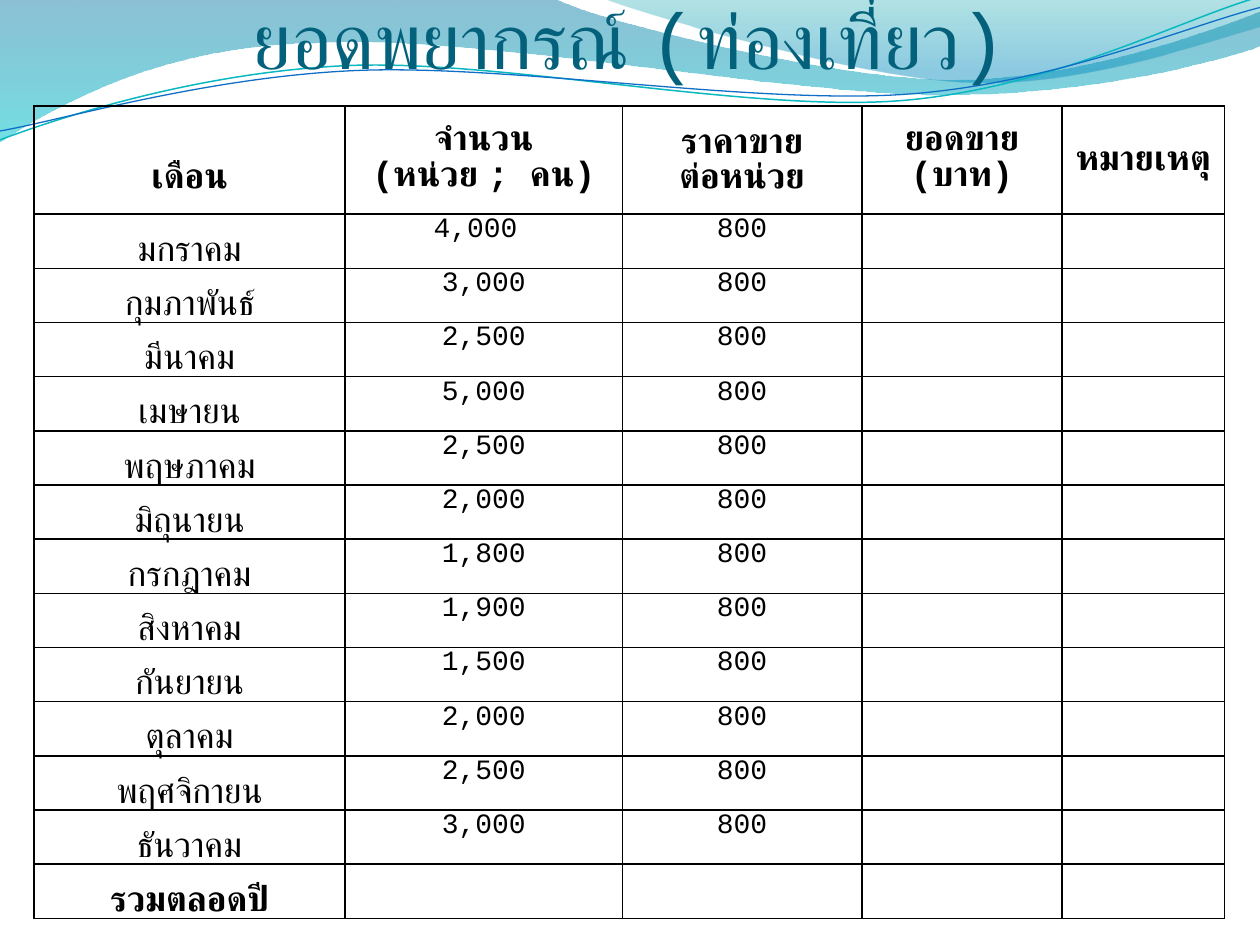
from math import cos, radians, sin

from lxml.etree import SubElement
from pptx import Presentation
from pptx.dml.color import RGBColor
from pptx.enum.text import MSO_ANCHOR, MSO_AUTO_SIZE, PP_ALIGN
from pptx.oxml.ns import qn
from pptx.util import Inches, Pt

FONT = "Courier New"
COLORS = {
    "title": "04617B", "text": "000000", "border": "000000",
    "teal_line": "0AB8BF", "blue_line": "0F6FC6",
    "deep_blue": "0074A1", "aqua": "00C6CF",
    "teal": "00A1A9", "blue": "008BBF",
}
LEFT_WAVE = [
    [(0, -0.01)], [(4.4, -0.01)],
    [(4.76, 0.17), (6.64, 0.63), (7.58, 0.63)],
    [(8.53, 0.63), (9.58, 0.26), (10, 0.09)],
    [(10.01, 0.36)],
    [(9.83, 0.44), (8.7, 0.76), (7.46, 0.75)],
    [(6.22, 0.75), (3.82, 0.28), (2.57, 0.34)],
    [(1.29, 0.35), (0.46, 0.83), (-0.01, 1.13)],
    [(0, -0.01)],
]
RIGHT_WAVE = [
    [(4.79, -0.01)],
    [(5.09, 0.11), (6.82, 0.62), (7.69, 0.65)],
    [(8.56, 0.69), (9.61, 0.32), (10, 0.21)],
    [(10, 0)], [(4.79, -0.01)],
]
TEAL_CURVE = [
    [(0, 1.11)],
    [(0.48, 0.93), (1.58, 0.57), (2.77, 0.52)],
    [(3.95, 0.47), (5.93, 0.89), (7.13, 0.8)],
    [(8.33, 0.71), (9.38, 0.15), (9.98, -0.02)],
]
BLUE_CURVE = [
    [(0, 1.04)],
    [(0.47, 0.96), (1.64, 0.61), (2.83, 0.56)],
    [(4.03, 0.51), (5.97, 0.83), (7.17, 0.75)],
    [(8.36, 0.67), (9.41, 0.21), (10, 0.06)],
]
CURVE_TILT = -2.7
HEADERS = [["เดือน"], ["จำนวน", "(หน่วย ; คน)"], ["ราคาขาย", "ต่อหน่วย"],
           ["ยอดขาย", "(บาท)"], ["หมายเหตุ"]]
UNITS = [
    ("มกราคม", "4,000 "), ("กุมภาพันธ์", "3,000"), ("มีนาคม", "2,500"),
    ("เมษายน", "5,000"), ("พฤษภาคม", "2,500"), ("มิถุนายน", "2,000"),
    ("กรกฎาคม", "1,800"), ("สิงหาคม", "1,900"), ("กันยายน", "1,500"),
    ("ตุลาคม", "2,000"), ("พฤศจิกายน", "2,500"), ("ธันวาคม", "3,000"),
]
PRICE = "800"
TOTAL = "รวมตลอดปี"
COL_WIDTHS = [2.47, 2.2, 1.9, 1.59, 1.29]
HEADER_HEIGHT, ROW_HEIGHT = 0.86, 0.43


def rgb(name):
    return RGBColor.from_string(COLORS[name])


def add_run(p, text, size, color="text", bold=False):
    r = p.add_run()
    r.text = text
    r.font.size = Pt(size)
    r.font.bold = bold
    r.font.name = FONT
    r.font.color.rgb = rgb(color)


def turn(segments, center, degrees):
    cx, cy = center
    c, s = cos(radians(degrees)), sin(radians(degrees))
    return [[(cx + (x - cx) * c - (y - cy) * s, cy + (x - cx) * s + (y - cy) * c)
             for x, y in seg] for seg in segments]


def add_outline(s, segments, close):
    start, *rest = [(Inches(x), Inches(y)) for seg in segments for x, y in seg]
    builder = s.shapes.build_freeform(*start)
    builder.add_line_segments(rest, close=close)
    sp = builder.convert_to_shape()
    sp.shadow.inherit = False
    lines = iter(list(sp.element.spPr.iter(qn("a:lnTo"))))
    for seg in segments[1:]:
        first, *others = [next(lines) for _ in seg]
        if others:
            first.tag = qn("a:cubicBezTo")
            for line in others:
                first.append(line[0])
                line.getparent().remove(line)
    return sp


def add_wave(s, segments, stops):
    sp = add_outline(s, segments, True)
    sp.line.fill.background()
    sp.fill.gradient()
    sp.fill.gradient_angle = 270
    for stop, (position, color, _) in zip(sp.fill.gradient_stops, stops):
        stop.position = position
        stop.color.rgb = rgb(color)
    for clr, (_, _, opacity) in zip(sp.element.spPr.iter(qn("a:srgbClr")), stops):
        SubElement(clr, qn("a:alpha"), val=str(opacity * 1000))


def add_curve(s, segments, center, color, width):
    sp = add_outline(s, turn(segments, center, -CURVE_TILT), False)
    sp.rotation = CURVE_TILT
    sp.fill.background()
    sp.line.color.rgb = rgb(color)
    sp.line.width = Pt(width)


def set_title(s, text):
    title = s.shapes.title
    s.shapes.element.append(title.element)
    title.left, title.top = Inches(0), Inches(0)
    title.width, title.height = Inches(10), Inches(0.68)
    tf = title.text_frame
    tf.auto_size = MSO_AUTO_SIZE.NONE
    tf.word_wrap = True
    tf.vertical_anchor = MSO_ANCHOR.BOTTOM
    tf.margin_left = tf.margin_right = tf.margin_bottom = Inches(0)
    tf.margin_top = Inches(0.05)
    p = tf.paragraphs[0]
    p.alignment = PP_ALIGN.CENTER
    add_run(p, text, 45, "title")


def format_cell(cell):
    cell.fill.background()
    cell.margin_left = cell.margin_right = Inches(0.07)
    cell.margin_top = cell.margin_bottom = Inches(0)
    tcPr = cell._tc.get_or_add_tcPr()
    for i, side in enumerate(("lnL", "lnR", "lnT", "lnB")):
        ln = tcPr.makeelement(qn(f"a:{side}"), {"w": str(Pt(1))})
        fill = SubElement(ln, qn("a:solidFill"))
        SubElement(fill, qn("a:srgbClr"), val=COLORS["border"])
        tcPr.insert(i, ln)


def fill_cell(cell, lines, size, anchor, bold=False):
    cell.vertical_anchor = anchor
    tf = cell.text_frame
    for i, line in enumerate(lines):
        p = tf.add_paragraph() if i else tf.paragraphs[0]
        p.alignment = PP_ALIGN.CENTER
        add_run(p, line, size, bold=bold)


def add_forecast_table(s):
    row_count = len(UNITS) + 2
    height = HEADER_HEIGHT + ROW_HEIGHT * (row_count - 1)
    table = s.shapes.add_table(row_count, len(COL_WIDTHS), Inches(0.27), Inches(0.84),
                               Inches(sum(COL_WIDTHS)), Inches(height)).table
    table.first_row = table.horz_banding = False
    for col, width in zip(table.columns, COL_WIDTHS):
        col.width = Inches(width)
    for i, row in enumerate(table.rows):
        row.height = Inches(ROW_HEIGHT if i else HEADER_HEIGHT)
    for cell in table.iter_cells():
        format_cell(cell)
    for i, lines in enumerate(HEADERS):
        fill_cell(table.cell(0, i), lines, 20, MSO_ANCHOR.MIDDLE, bold=True)
    table.cell(0, 0).margin_top = Inches(0.29)
    for i, (month, units) in enumerate(UNITS, 1):
        fill_cell(table.cell(i, 0), [month], 20, MSO_ANCHOR.BOTTOM)
        fill_cell(table.cell(i, 1), [units], 16, MSO_ANCHOR.TOP)
        fill_cell(table.cell(i, 2), [PRICE], 16, MSO_ANCHOR.TOP)
    fill_cell(table.cell(row_count - 1, 0), [TOTAL], 20, MSO_ANCHOR.BOTTOM, bold=True)


def main():
    prs = Presentation()
    prs.slide_width, prs.slide_height = Inches(10), Inches(7.5)
    s = prs.slides.add_slide(prs.slide_layouts[5])
    add_wave(s, LEFT_WAVE, [(0, "deep_blue", 45), (1, "aqua", 55)])
    add_wave(s, RIGHT_WAVE, [(0, "teal", 30), (0.8, "blue", 45)])
    add_curve(s, TEAL_CURVE, (4.99, 0.58), "teal_line", 0.85)
    add_curve(s, BLUE_CURVE, (5, 0.59), "blue_line", 0.75)
    set_title(s, "ยอดพยากรณ์ (ท่องเที่ยว)")
    add_forecast_table(s)
    prs.save("out.pptx")


if __name__ == "__main__":
    main()
